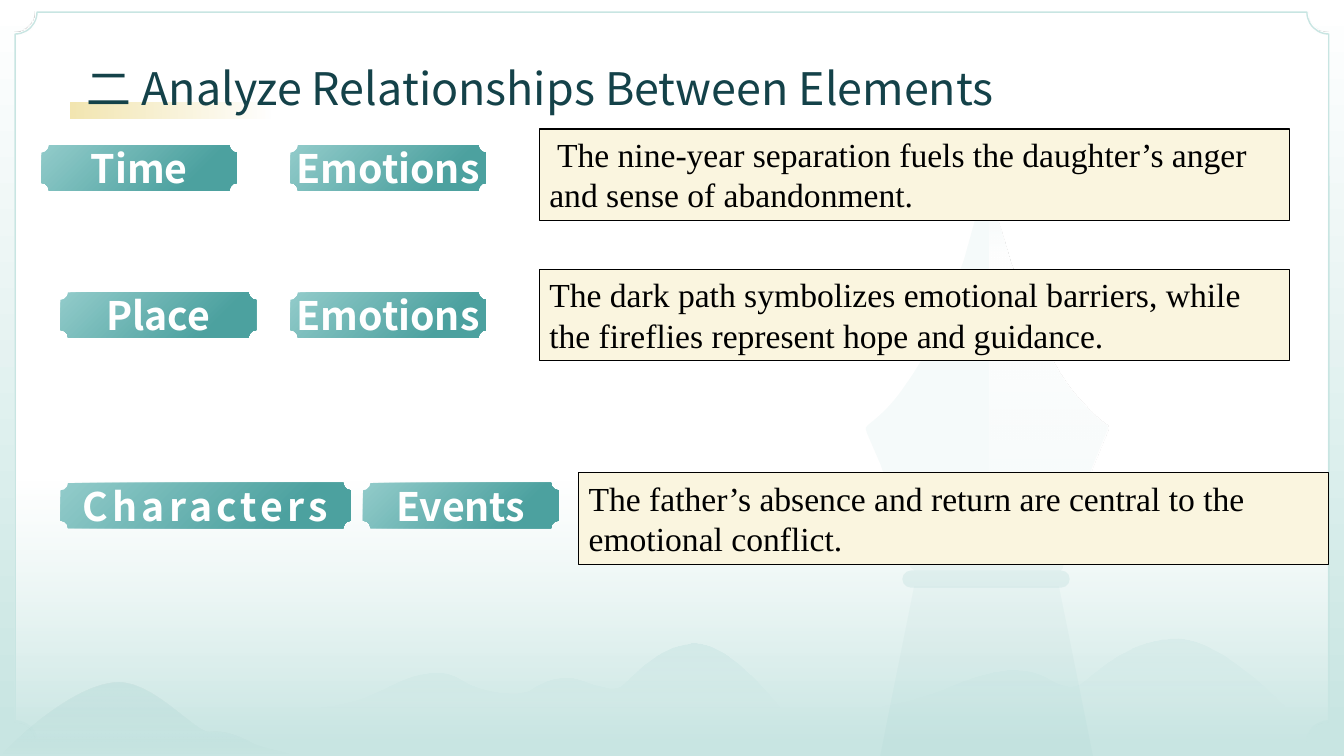
from lxml import etree
from pptx import Presentation
from pptx.dml.color import RGBColor
from pptx.enum.shapes import MSO_SHAPE as SHAPE
from pptx.enum.text import MSO_ANCHOR as ANCHOR, MSO_AUTO_SIZE as AUTOSIZE, PP_ALIGN as ALIGN
from pptx.oxml import parse_xml
from pptx.oxml.ns import qn
from pptx.util import Inches, Pt

# Content
TITLE = " 二 Analyze Relationships Between Elements"
# Each relation: tags (text, left, width, letter spacing), tag top, note (text, left, top)
RELATIONS = [
    ([("Time", 0.41, 1.94, 0), ("Emotions", 2.88, 1.94, 0)], 1.44,
     (" The nine-year separation fuels the daughter’s anger and sense of abandonment.", 5.35, 1.28)),
    ([("Place", 0.6, 1.94, 0), ("Emotions", 2.88, 1.94, 0)], 2.9,
     ("The dark path symbolizes emotional barriers, while the fireflies represent hope and guidance.",
      5.35, 2.67)),
    ([("Characters", 0.6, 2.88, 3), ("Events", 3.6, 1.94, 0)], 4.79,
     ("The father’s absence and return are central to the emotional conflict.", 5.74, 4.69)),
]
TAG_HEIGHT, NOTE_WIDTH, NOTE_HEIGHT = 0.45, 7.44, 0.91

SANS, SERIF = "Noto Sans CJK SC", "Times New Roman"
INK, WHITE, BLACK = "144249", "FFFFFF", "000000"
TEAL, TEAL_LIGHT, MIST, HILL = "4CA19F", "90CAC9", "C8E5E2", "B5DCDB"
GOLD, CREAM, BACKDROP = "E6CC60", "FAF5DF", "E8F4F3"

# Outlines: pairs are corners, sixes are Bézier curves (two handles and an end)
HILLS = [
    ([(8.58, 7.02), (12.76, 7.02), (12.76, 7.02, 12.12, 6.35, 11.68, 6.34),
      (11.23, 6.33, 10.89, 6.65, 10.76, 6.75), (10.68, 6.81, 10.63, 6.86, 10.39, 6.73),
      (10.16, 6.6, 9.87, 6.61, 9.37, 6.83), (8.97, 6.99, 8.58, 7.02, 8.58, 7.02)],
     [(0, HILL, 20), (100, HILL, 0)]),
    ([(3.19, 7.02), (7.74, 7.02), (7.74, 7.02, 7.25, 6.4, 6.91, 6.39),
      (6.57, 6.38, 6.31, 6.67, 6.2, 6.77), (6.14, 6.82, 6.11, 6.87, 5.77, 6.75),
      (5.58, 6.68, 5.39, 6.75, 5.26, 6.84), (5.15, 6.91, 4.77, 6.87, 4.59, 6.75),
      (4.4, 6.63, 4.18, 6.64, 3.79, 6.84), (3.49, 6.99, 3.19, 7.01, 3.19, 7.01)],
     [(0, HILL, 30), (100, HILL, 0)]),
    ([(0, 7.5), (2.98, 7.5), (2.98, 7.5, 2.64, 7.43, 2.52, 7.38),
      (2.4, 7.32, 2.25, 7.24, 2.08, 7.26), (1.94, 7.28, 1.55, 6.78, 1.18, 6.77),
      (0.8, 6.77, 0.27, 7.21, 0, 7.5)],
     [(0, TEAL, 10), (99, TEAL, 0)]),
]
NIB_RIGHT = [(9.86, 2.07), (9.93, 2.28), (10.02, 2.59), (10.09, 2.79, 10.15, 2.98, 10.23, 3.16),
             (10.3, 3.31, 10.37, 3.46, 10.45, 3.6), (10.53, 3.74, 10.62, 3.88, 10.74, 4),
             (10.81, 4.08, 10.89, 4.16, 10.98, 4.22), (10.99, 4.25), (10.85, 4.59),
             (10.73, 4.92), (10.63, 5.26), (10.54, 5.64), (10.52, 5.66)]
NIB_LEFT = [(9.07, 5.66), (9.03, 5.63), (8.96, 5.34), (8.86, 4.96), (8.73, 4.6), (8.6, 4.3),
            (8.58, 4.24, 8.58, 4.24, 8.63, 4.2), (8.77, 4.09, 8.88, 3.97, 8.98, 3.82),
            (9.08, 3.68, 9.17, 3.53, 9.24, 3.38), (9.4, 3.01), (9.56, 2.58), (9.71, 2.04)]
NIB_TIP = [(9.68, 2.02, 9.67, 1.99, 9.67, 1.95), (9.67, 1.88, 9.72, 1.83, 9.79, 1.83),
           (9.86, 1.83, 9.91, 1.88, 9.91, 1.95), (9.91, 1.99, 9.89, 2.02, 9.86, 2.04)]
NIB = NIB_RIGHT + NIB_LEFT + NIB_TIP
NIB_SHINE = [(9.81, 2.05)] + NIB_RIGHT + [(9.81, 5.66)]

prs = Presentation()
prs.slide_width, prs.slide_height = Inches(13.33), Inches(7.5)
slide = prs.slides.add_slide(prs.slide_layouts[5])
shapes = slide.shapes


def rgb(value):
    return RGBColor.from_string(value)


def paint(shape, stops, angle=90, line=None):
    """Fill with (position, colour, opacity) stops; a single stop gives a solid fill."""
    shape.shadow.inherit = False
    shape.fill.background()
    old = shape._element.spPr.find(qn("a:noFill"))
    colours = [f'<a:srgbClr val="{colour}"><a:alpha val="{opacity * 1000}"/></a:srgbClr>'
               for _, colour, opacity in stops]
    if len(stops) == 1:
        tag, body = "solidFill", colours[0]
    else:
        tag = "gradFill"
        marks = "".join(f'<a:gs pos="{stop[0] * 1000}">{colour}</a:gs>'
                        for stop, colour in zip(stops, colours))
        body = f'<a:gsLst>{marks}</a:gsLst><a:lin ang="{angle * 60000}" scaled="0"/>'
    uri = "http://schemas.openxmlformats.org/drawingml/2006/main"
    old.getparent().replace(old, parse_xml(f'<a:{tag} xmlns:a="{uri}">{body}</a:{tag}>'))
    if line:
        shape.line.color.rgb, shape.line.width = rgb(line[0]), Pt(line[1])
    else:
        shape.line.fill.background()


def block(kind, left, top, width, height, stops, angle=90, line=None, adjust=None):
    shape = shapes.add_shape(kind, Inches(left), Inches(top), Inches(width), Inches(height))
    if adjust is not None:
        shape.adjustments[0] = adjust
    paint(shape, stops, angle, line)
    return shape


def outline(parts, stops):
    """Build through every point, then join each curve's three points into one Bézier."""
    mils = [(part[i] * 1000, part[i + 1] * 1000) for part in parts for i in range(0, len(part), 2)]
    builder = shapes.build_freeform(*mils[0], scale=Inches(1) / 1000)
    builder.add_line_segments(mils[1:], close=True)
    shape = builder.convert_to_shape()
    segments = iter(list(shape._element.iter(qn("a:lnTo"))))
    for part in parts[1:]:
        group = [next(segments) for _ in range(len(part) // 2)]
        if len(group) == 3:
            curve = etree.Element(qn("a:cubicBezTo"))
            group[0].addprevious(curve)
            for segment in group:
                curve.append(segment[0])
                segment.getparent().remove(segment)
    paint(shape, stops)


def write(shape, text, size, font, color, bold=False, align=ALIGN.LEFT, anchor=ANCHOR.TOP,
          wrap=True, inset=None, spacing=0, autosize=AUTOSIZE.NONE):
    frame = shape.text_frame
    frame.word_wrap, frame.vertical_anchor, frame.auto_size = wrap, anchor, autosize
    if inset is not None:
        frame.margin_left = frame.margin_right = frame.margin_top = frame.margin_bottom = Inches(inset)
    paragraph = frame.paragraphs[0]
    paragraph.alignment = align
    run = paragraph.add_run()
    run.text = text
    run.font.size, run.font.bold, run.font.name = Pt(size), bold, font
    run.font.color.rgb = rgb(color)
    properties = run.font._element
    etree.SubElement(properties, qn("a:ea")).set("typeface", font)
    if spacing:
        properties.set("spc", str(spacing * 100))


# Backdrop, frame and title underline
slide.background.fill.solid()
slide.background.fill.fore_color.rgb = rgb(BACKDROP)
block(SHAPE.RECTANGLE, 0, 0, 13.33, 7.5, [(0, WHITE, 100), (97, MIST, 100)])
block(SHAPE.PLAQUE, 0.15, 0.12, 13.03, 7.25, [(64, WHITE, 100), (100, WHITE, 0)],
      line=(MIST, 1), adjust=0.03)
block(SHAPE.RECTANGLE, 0.7, 1.02, 2, 0.16, [(0, GOLD, 0), (100, GOLD, 50)], angle=180)

# Hills and fountain pen
for hill, shade in HILLS:
    outline(hill, shade)
outline(NIB, [(0, TEAL, 5)])
outline(NIB_SHINE, [(0, WHITE, 0), (14, WHITE, 100), (97, WHITE, 0)])
block(SHAPE.TRAPEZOID, 8.73, 5.82, 2.11, 1.68, [(0, TEAL, 4)], adjust=0.2)
block(SHAPE.ROUNDED_RECTANGLE, 8.95, 5.66, 1.66, 0.17, [(0, TEAL, 10)], adjust=0.5)

# Title, brought in front of the scenery
title = shapes.title
title.left, title.top, title.width, title.height = map(Inches, (0.76, 0.35, 11.81, 0.79))
write(title, TITLE, 32, SANS, INK, anchor=ANCHOR.BOTTOM, inset=0)
shapes._spTree.append(title._element)

# Relations: two tags and a note per row
for tags, tag_top, (note_text, note_left, note_top) in RELATIONS:
    for tag_text, tag_left, tag_width, spacing in tags:
        tag = block(SHAPE.PLAQUE, tag_left, tag_top, tag_width, TAG_HEIGHT,
                    [(2, TEAL_LIGHT, 100), (78, TEAL, 100)], angle=45)
        write(tag, tag_text, 28, SANS, WHITE, bold=True, align=ALIGN.CENTER,
              anchor=ANCHOR.MIDDLE, wrap=False, inset=0, spacing=spacing)
    note = block(SHAPE.RECTANGLE, note_left, note_top, NOTE_WIDTH, NOTE_HEIGHT,
                 [(0, CREAM, 100)], line=(BLACK, 0.75))
    write(note, note_text, 24, SERIF, BLACK, autosize=AUTOSIZE.SHAPE_TO_FIT_TEXT)

prs.save("out.pptx")
